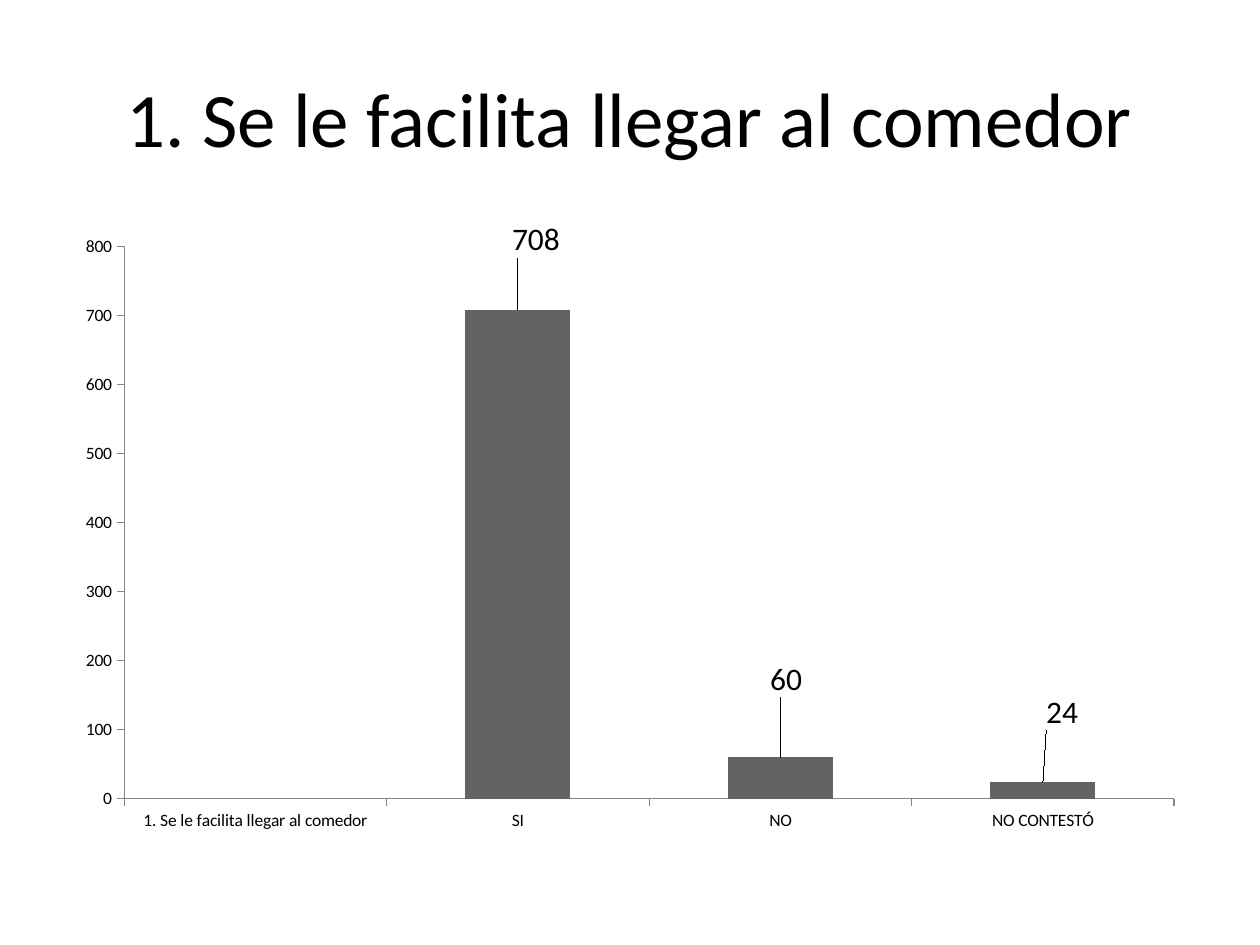
from lxml import etree
from pptx import Presentation
from pptx.chart.data import CategoryChartData
from pptx.dml.color import RGBColor
from pptx.enum import chart as ch, text
from pptx.oxml.ns import qn
from pptx.util import Inches, Pt


def color(hex_value):
    return RGBColor.from_string(hex_value)


def manual_layout(**settings):
    """Return a c:layout element; x, y, w and h are fractions of the chart."""
    layout = etree.Element(qn("c:layout"))
    manual = etree.SubElement(layout, qn("c:manualLayout"))
    for name, value in settings.items():
        etree.SubElement(manual, qn(f"c:{name}"), val=str(value))
    return layout


deck = Presentation()
deck.slide_width, deck.slide_height = Inches(10), Inches(7.5)
page = deck.slides.add_slide(deck.slide_layouts[6])

# Title
question = "1. Se le facilita llegar al comedor"
title = page.shapes.add_textbox(Inches(0.5), Inches(0.3), Inches(9), Inches(1.25))
frame = title.text_frame
frame.word_wrap = True
frame.vertical_anchor = text.MSO_ANCHOR.MIDDLE
para = frame.paragraphs[0]
para.text = question
para.alignment = text.PP_ALIGN.CENTER
para.font.name, para.font.size = "Calibri", Pt(44)
para.font.color.rgb = color("000000")

# Column chart of the answers
data = CategoryChartData()
data.categories = [question, "SI", "NO", "NO CONTESTÓ"]
data.add_series("Series 1", [None, 708, 60, 24])
chart = page.shapes.add_chart(
    ch.XL_CHART_TYPE.COLUMN_CLUSTERED,
    Inches(0.5), Inches(1.75), Inches(9), Inches(4.95), data).chart
chart.has_title = False
chart.has_legend = False
chart.font.name, chart.font.size = "Calibri", Pt(10)
chart.font.color.rgb = color("000000")

plot = chart.plots[0]
plot.gap_width = 150
plot.vary_by_categories = False
series = plot.series[0]
series.format.fill.solid()
series.format.fill.fore_color.rgb = color("636363")

for axis in (chart.category_axis, chart.value_axis):
    axis.has_major_gridlines = False
    axis.major_tick_mark = ch.XL_TICK_MARK.OUTSIDE
    axis.minor_tick_mark = ch.XL_TICK_MARK.NONE
    axis.format.line.color.rgb = color("868686")
    axis.format.line.width = Pt(0.75)
chart.value_axis.minimum_scale = 0
chart.value_axis.maximum_scale = 800
chart.value_axis.major_unit = 100

plot_area = chart.element.find(".//" + qn("c:plotArea"))
for old_layout in plot_area.findall(qn("c:layout")):
    plot_area.remove(old_layout)
plot_area.insert(0, manual_layout(
    layoutTarget="inner", xMode="edge", yMode="edge",
    x=0.054, y=0.036, w=0.926, h=0.891))

# Value labels, each shifted from its place above the column
label_shifts = {1: (0.016, -0.075), 2: (0.005, -0.088), 3: (0.017, -0.075)}
for index in label_shifts:
    label = series.points[index].data_label
    label.font.name, label.font.size = "Calibri", Pt(18)
    label.font.color.rgb = color("000000")
    label.position = ch.XL_LABEL_POSITION.OUTSIDE_END
for label_xml, (x, y) in zip(chart.element.iter(qn("c:dLbl")), label_shifts.values()):
    label_xml.insert(1, manual_layout(x=x, y=y))

deck.save("out.pptx")
